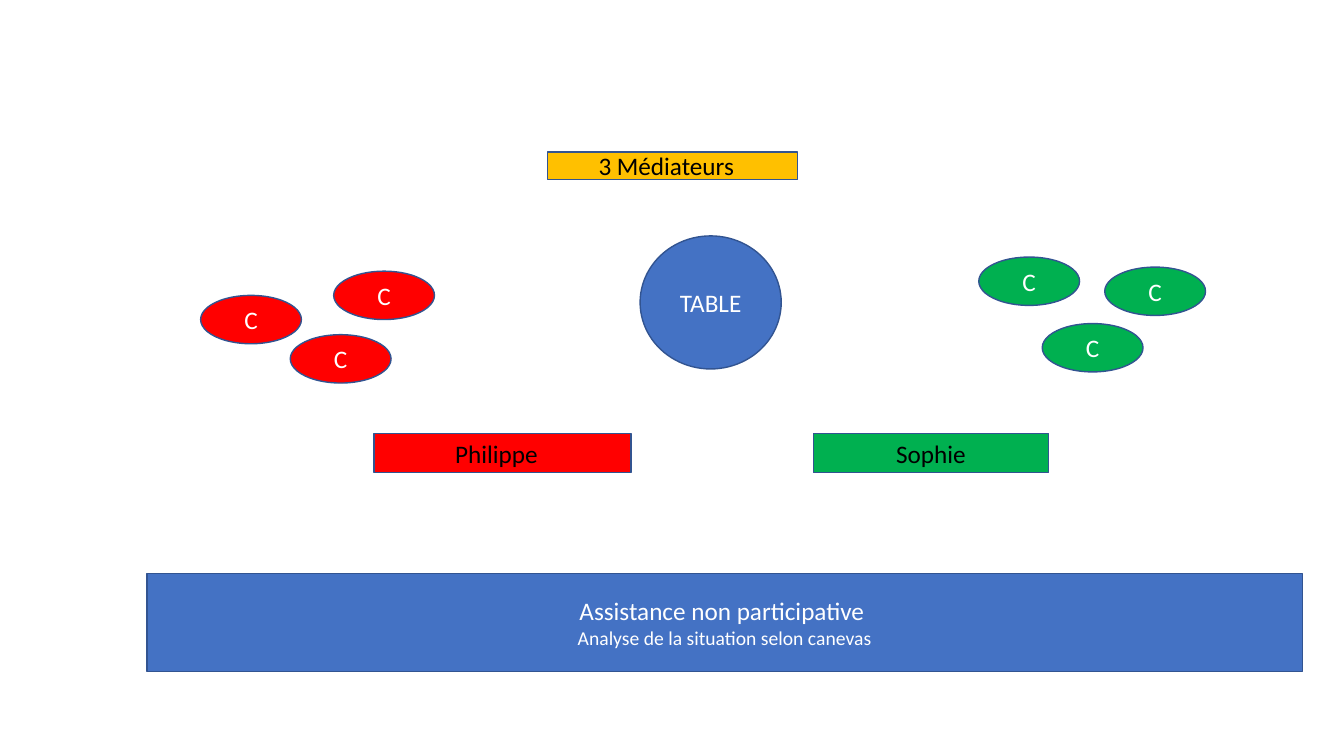
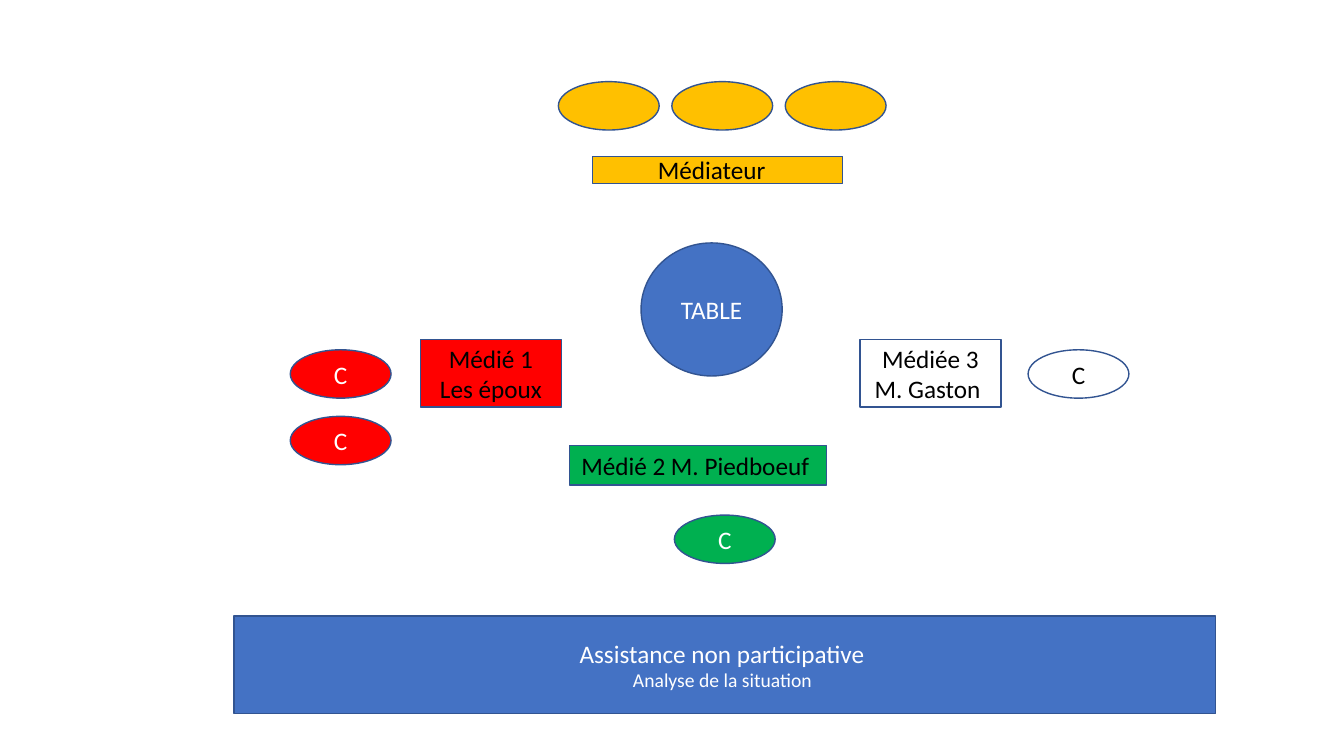
from pptx import Presentation
from pptx.dml.color import RGBColor
from pptx.enum.shapes import MSO_SHAPE
from pptx.enum.text import MSO_ANCHOR, PP_ALIGN
from pptx.util import Inches, Pt

SLIDE_WIDTH = Inches(13.333)
SLIDE_HEIGHT = Inches(7.5)
BLANK_LAYOUT = 6

BLUE = RGBColor(0x44, 0x72, 0xC4)
OUTLINE = RGBColor(0x32, 0x54, 0x91)
AMBER = RGBColor(0xFF, 0xC0, 0x00)
RED = RGBColor(0xFF, 0x00, 0x00)
GREEN = RGBColor(0x00, 0xB0, 0x50)
WHITE = RGBColor(0xFF, 0xFF, 0xFF)
BLACK = RGBColor(0x00, 0x00, 0x00)

FONT = "Calibri"
TEXT_SIZE = 18
NOTE_SIZE = 14
INSET = Inches(0.1)

# Sizes are (width, height) in percent of the slide
SEAT = (7.5, 6.4)
TABLE = (10.5, 17.6)
MEDIATOR = (18.6, 3.6)
WIDE_PARTY = (19.13, 5.2)
SOPHIE = (17.48, 5.2)
SQUARE_PARTY = (10.5, 8.93)
BAND_HEIGHT = 12.93
SEAT_STEP = 8.44


def across(share):
    return round(SLIDE_WIDTH * share / 100)


def down(share):
    return round(SLIDE_HEIGHT * share / 100)


def write_lines(shape, lines, color, shift=0):
    """Write (text, size) lines, centred and moved left by shift inches."""
    frame = shape.text_frame
    settings = {
        "word_wrap": True,
        "vertical_anchor": MSO_ANCHOR.MIDDLE,
        "margin_left": INSET,
        "margin_right": INSET + Inches(2 * shift),
    }
    for name, value in settings.items():
        setattr(frame, name, value)
    for index, (text, size) in enumerate(lines):
        para = frame.add_paragraph() if index else frame.paragraphs[0]
        para.alignment = PP_ALIGN.CENTER
        span = para.add_run()
        span.text = text
        for name, value in {"name": FONT, "size": Pt(size)}.items():
            setattr(span.font, name, value)
        span.font.color.rgb = color


def add_figure(page, kind, place, size, fill):
    """Add an outlined shape; place and size are percent of the slide."""
    shape = page.shapes.add_shape(
        kind, across(place[0]), down(place[1]), across(size[0]), down(size[1]))
    shape.shadow.inherit = False
    shape.fill.solid()
    shape.fill.fore_color.rgb = fill
    shape.line.color.rgb = OUTLINE
    shape.line.width = Pt(1)
    return shape


def add_seat(page, place, fill, text="C", color=WHITE):
    seat = add_figure(page, MSO_SHAPE.OVAL, place, SEAT, fill)
    if text:
        write_lines(seat, [(text, TEXT_SIZE)], color)


def add_round_table(page, place):
    table = add_figure(page, MSO_SHAPE.OVAL, place, TABLE, BLUE)
    write_lines(table, [("TABLE", TEXT_SIZE)], WHITE)


def add_label(page, text, place, size, fill, shift=0):
    label = add_figure(page, MSO_SHAPE.ROUNDED_RECTANGLE, place, size, fill)
    label.adjustments[0] = 0
    write_lines(label, [(text, TEXT_SIZE)], BLACK, shift)


def add_audience(page, place, width, note):
    band = add_figure(page, MSO_SHAPE.RECTANGLE, place, (width, BAND_HEIGHT), BLUE)
    lines = [("Assistance non participative ", TEXT_SIZE), (note, NOTE_SIZE)]
    write_lines(band, lines, WHITE)


def build_two_parties(page):
    add_label(page, "3 Médiateurs", (40.73, 20.13), MEDIATOR, AMBER, shift=0.06)
    add_round_table(page, (47.63, 31.2))
    add_label(page, "Philippe", (27.83, 57.33), WIDE_PARTY, RED, shift=0.06)
    add_label(page, "Sophie", (60.53, 57.33), SOPHIE, GREEN)
    seats = {
        RED: [(14.93, 39.07), (21.6, 44.27), (24.83, 35.87)],
        GREEN: [(82.2, 35.33), (77.55, 42.8), (72.83, 34)],
    }
    for fill, places in seats.items():
        for place in places:
            add_seat(page, place, fill)
    add_audience(page, (10.95, 75.87), 85.95,
                 "Analyse de la situation selon canevas")


def build_three_parties(page):
    for index in range(3):
        add_seat(page, (41.55 + index * SEAT_STEP, 10.8), AMBER, text="")
    add_label(page, "Médiateur", (44.1, 20.67), MEDIATOR, AMBER, shift=0.06)
    add_round_table(page, (47.7, 32.13))
    add_label(page, "Médié 2 M. Piedboeuf ", (42.38, 58.93), WIDE_PARTY, GREEN)
    add_label(page, "Médiée 3 M. Gaston ", (63.98, 44.93), SQUARE_PARTY, WHITE)
    add_label(page, "Médié 1 Les époux", (31.28, 44.93), SQUARE_PARTY, RED)
    add_seat(page, (50.18, 68.13), GREEN)
    for top in (46.27, 55.07):
        add_seat(page, (21.6, top), RED)
    add_seat(page, (76.5, 46.27), WHITE, color=BLACK)
    add_audience(page, (17.4, 81.47), 73.05, "Analyse de la situation ")


def main():
    deck = Presentation()
    deck.slide_width = SLIDE_WIDTH
    deck.slide_height = SLIDE_HEIGHT
    for build in (build_two_parties, build_three_parties):
        build(deck.slides.add_slide(deck.slide_layouts[BLANK_LAYOUT]))
    deck.save("out.pptx")


if __name__ == "__main__":
    main()
